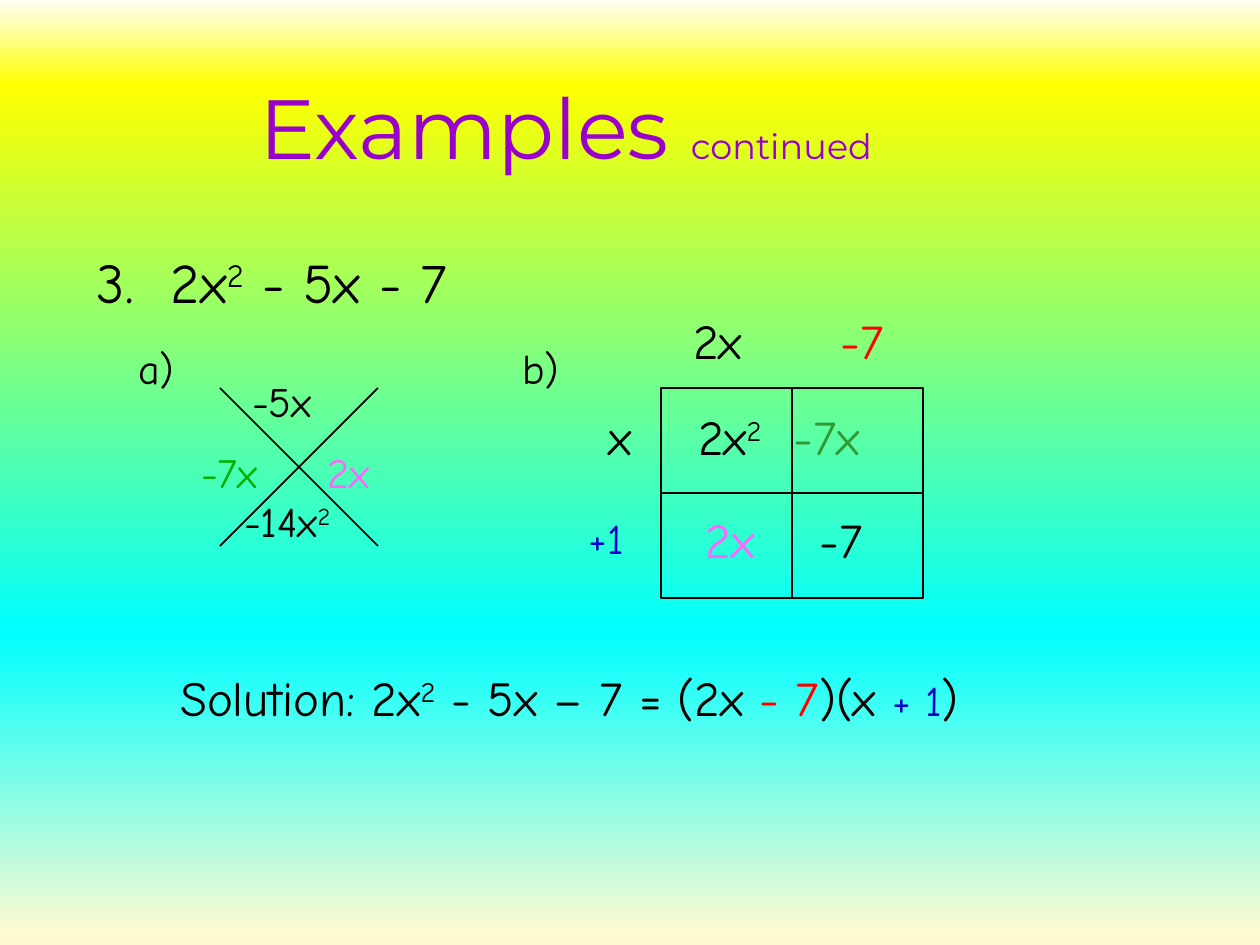
from dataclasses import dataclass

from lxml import etree
from pptx import Presentation
from pptx import util as u
from pptx.dml import color
from pptx.enum import shapes, text
from pptx.oxml import ns

PX = 914400 // 126
BLACK, RED, BLUE = "000000", "FF0000", "0000CC"
PINK, GREEN, OLIVE, PURPLE = "FF66FF", "00B200", "339933", "9900CC"
BODY_FONT, TITLE_FONT = "Comic Neue", "Montserrat"
ASCENT = 0.98


@dataclass(frozen=True)
class Piece:
    words: str
    hue: str = BLACK
    size: int = 0
    raised: bool = False


@dataclass(frozen=True)
class Label:
    left: int
    baseline: int
    size: int
    pieces: tuple[Piece, ...]
    width: int = 110
    tab: int = 0


def px(length: int) -> u.Emu:
    return u.Emu(length * PX)


def rgb(value: str) -> color.RGBColor:
    return color.RGBColor.from_string(value)


def child(parent, tag: str, **attributes: str):
    return etree.SubElement(parent, ns.qn(tag), attributes)


def add_piece(paragraph, piece: Piece, size: int, font: str):
    run = paragraph.add_run()
    run.text = piece.words
    run.font.name = font
    run.font.size = u.Pt(piece.size or size)
    run.font.color.rgb = rgb(piece.hue)
    if piece.raised:
        run.font._element.set("baseline", "30000")
    return run


def draw_label(slide, label: Label) -> None:
    em = label.size * 1.75
    top = round(label.baseline - ASCENT * em)
    box = slide.shapes.add_textbox(px(label.left), px(top), px(label.width), px(round(em * 1.2)))
    frame = box.text_frame
    frame.word_wrap = True
    frame.margin_left = frame.margin_right = frame.margin_top = frame.margin_bottom = 0
    paragraph = frame.paragraphs[0]
    if label.tab:
        tabs = child(paragraph._p.get_or_add_pPr(), "a:tabLst")
        child(tabs, "a:tab", pos=str(px(label.tab)), algn="l")
    for piece in label.pieces:
        add_piece(paragraph, piece, label.size, BODY_FONT)


def draw_title(slide) -> None:
    box = slide.shapes.add_textbox(px(93), px(67), px(946), px(116))
    frame = box.text_frame
    frame.word_wrap = True
    frame.vertical_anchor = text.MSO_ANCHOR.BOTTOM
    paragraph = frame.paragraphs[0]
    paragraph.alignment = text.PP_ALIGN.CENTER
    for piece in (Piece("Examples ", PURPLE, 48), Piece("continued", PURPLE, 20)):
        run = add_piece(paragraph, piece, piece.size, TITLE_FONT)
        effects = etree.Element(ns.qn("a:effectLst"))
        shadow = child(effects, "a:outerShdw", dist="38100", dir="2700000", algn="tl")
        child(shadow, "a:srgbClr", val=BLACK)
        run.font._element.find(ns.qn("a:solidFill")).addnext(effects)


def draw_line(slide, x1: int, y1: int, x2: int, y2: int):
    line = slide.shapes.add_connector(
        shapes.MSO_CONNECTOR.STRAIGHT, px(x1), px(y1), px(x2), px(y2))
    line.line.color.rgb = rgb(BLACK)
    line.line.width = u.Pt(1)
    child(line._element.spPr, "a:effectLst")
    return line


def draw_factor_box(slide, left: int, top: int, width: int, height: int) -> None:
    outline = slide.shapes.add_shape(
        shapes.MSO_SHAPE.RECTANGLE, px(left), px(top), px(width), px(height))
    outline.shadow.inherit = False
    outline.fill.background()
    outline.line.color.rgb = rgb(BLACK)
    outline.line.width = u.Pt(1)
    middle_x, middle_y = left + width // 2, top + height // 2
    divider = draw_line(slide, middle_x, top, middle_x, top + height)
    divider.begin_connect(outline, 0)
    divider.end_connect(outline, 2)
    divider = draw_line(slide, left, middle_y, left + width, middle_y)
    divider.begin_connect(outline, 1)
    divider.end_connect(outline, 3)


def paint_background(slide) -> None:
    fill = slide.background.fill
    fill.gradient()
    fill.gradient_angle = 270
    stops = slide._element.find(".//" + ns.qn("a:gsLst"))
    for stop in list(stops):
        stops.remove(stop)
    for percent, hue in ((0, "FFFEF7"), (9, "FFFF00"), (67, "00FFFF"), (99, "FFFAD1")):
        child(child(stops, "a:gs", pos=str(percent * 1000)), "a:srgbClr", val=hue)


SQUARED = Piece("2", raised=True)
LABELS = (
    Label(97, 303, 32, (Piece("3.\t2x"), SQUARED, Piece(" - 5x - 7")), width=1000, tab=74),
    Label(138, 384, 24, (Piece("a)\tb)"),), width=600, tab=384),
    Label(252, 417, 24, (Piece("-5x"),)),
    Label(201, 488, 24, (Piece("-7x", GREEN),)),
    Label(328, 488, 24, (Piece("2x", PINK),)),
    Label(244, 537, 24, (Piece("-14x"), SQUARED)),
    Label(693, 359, 28, (Piece("2x"),)),
    Label(841, 359, 28, (Piece("-7", RED),)),
    Label(609, 455, 28, (Piece("x"),)),
    Label(589, 554, 24, (Piece("+1", BLUE),)),
    Label(698, 455, 28, (Piece("2x"), SQUARED)),
    Label(794, 455, 28, (Piece("-7x", OLIVE),)),
    Label(706, 558, 28, (Piece("2x", PINK),)),
    Label(820, 558, 28, (Piece("-7"),)),
    Label(180, 716, 28, (
        Piece("Solution: 2x"), SQUARED, Piece(" - 5x – 7 = (2x "), Piece("- 7", RED),
        Piece(")(x "), Piece("+ 1", BLUE, 24), Piece(")")), width=900),
)


def main() -> None:
    deck = Presentation()
    deck.slide_width, deck.slide_height = px(1260), px(945)
    slide = deck.slides.add_slide(deck.slide_layouts[6])
    paint_background(slide)
    draw_title(slide)
    draw_line(slide, 220, 388, 378, 546)
    draw_line(slide, 220, 546, 378, 388)
    draw_factor_box(slide, 661, 388, 262, 210)
    for label in LABELS:
        draw_label(slide, label)
    deck.save("out.pptx")


if __name__ == "__main__":
    main()
